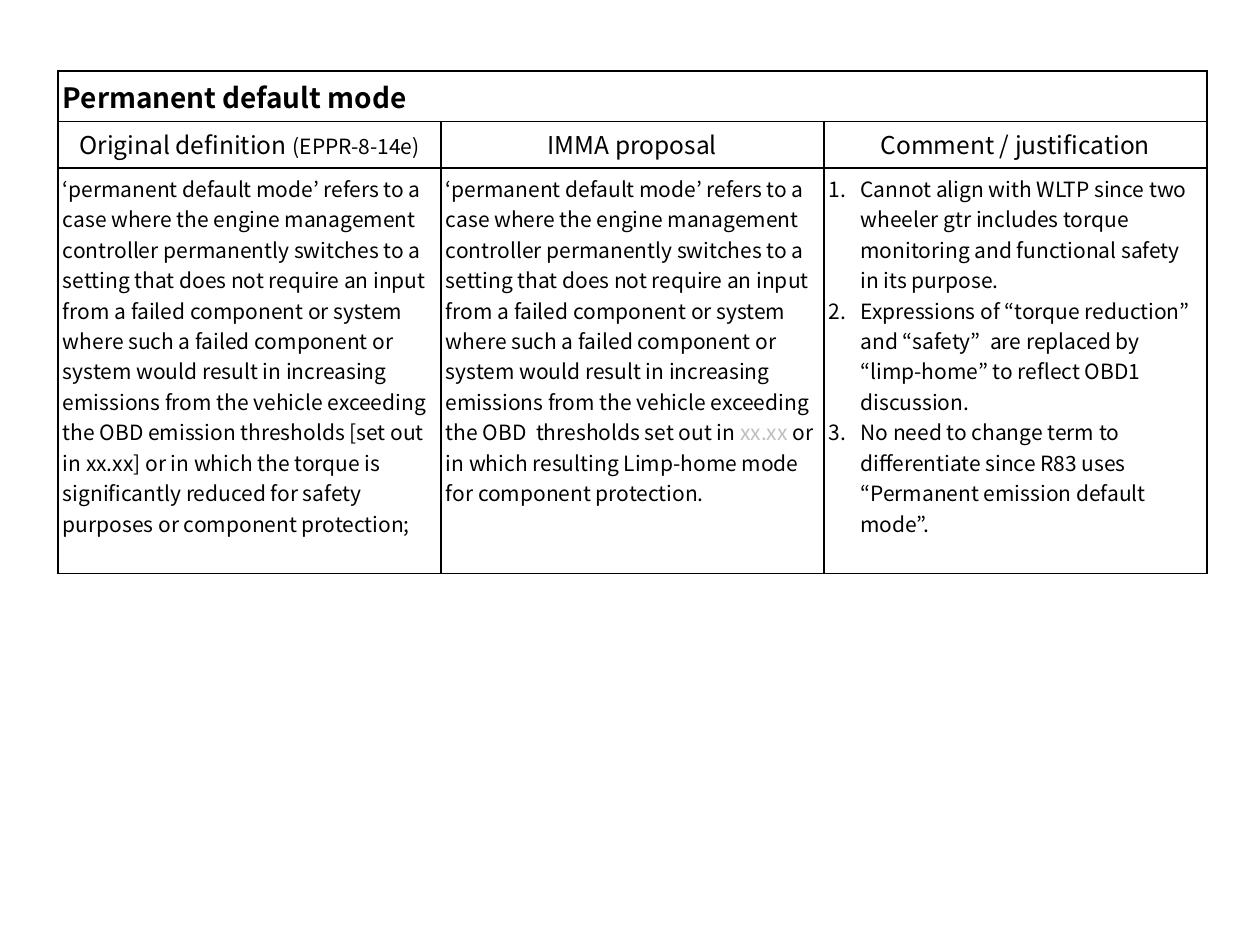
from dataclasses import dataclass

from lxml.etree import SubElement as Sub
from pptx import Presentation as Deck
from pptx.dml.color import RGBColor as Color
from pptx.enum.text import MSO_ANCHOR as Anchor, PP_ALIGN as Align
from pptx.oxml import parse_xml
from pptx.oxml.ns import nsdecls, qn
from pptx.table import _Cell as Cell
from pptx.util import Inches, Pt


@dataclass(frozen=True)
class Theme:
    font: str = "Noto Sans CJK JP"
    ink: str = "000000"
    faint: str = "BFBFBF"
    title: int = 16
    head: int = 14
    body: int = 12
    rule: float = 1
    inset: float = 0.04
    indent: float = 0.25


@dataclass(frozen=True)
class Run:
    text: str
    size: int
    color: str
    bold: bool = False


@dataclass(frozen=True)
class Entry:
    row: int
    col: int
    paras: list[list[Run]]
    align: Align = Align.LEFT
    listed: bool = False


THEME = Theme()
WIDE, HIGH = Inches(10), Inches(7.5)
LEFT, TOP, SPAN = 0.046, 0.075, 0.912
COLS = 3
ROWS = (0.4, 0.37, 3.22)


def body(text: str, color: str = THEME.ink) -> Run:
    return Run(text, THEME.body, color)


def head(text: str) -> Run:
    return Run(text, THEME.head, THEME.ink)


SHARED = (
    "‘permanent default mode’ refers to a case where the engine management "
    "controller permanently switches to a setting that does not require an input "
    "from a failed component or system where such a failed component or system "
    "would result in increasing emissions from the vehicle exceeding the OBD "
)
NOTES = (
    "Cannot align with WLTP since two wheeler gtr includes torque monitoring "
    "and functional safety in its purpose.",
    "Expressions of “torque reduction” and “safety”  are replaced by "
    "“limp-home” to reflect OBD1 discussion.",
    "No need to change term to differentiate since R83 uses "
    "“Permanent emission default mode”.",
)
ENTRIES = (
    Entry(0, 0, [[Run("Permanent default mode", THEME.title, THEME.ink, True)]]),
    Entry(1, 0, [[head("Original definition "), body("(EPPR-8-14e)")]], Align.CENTER),
    Entry(1, 1, [[head("IMMA proposal")]], Align.CENTER),
    Entry(1, 2, [[head("Comment / justification")]], Align.CENTER),
    Entry(2, 0, [[body(
        SHARED + "emission thresholds [set out in xx.xx] or in which the torque is "
        "significantly reduced for safety purposes or component protection;"
    )]]),
    Entry(2, 1, [[
        body(SHARED + " thresholds set out in "),
        body("xx.xx ", THEME.faint),
        body("or in which resulting Limp-home mode for component protection."),
    ]]),
    Entry(2, 2, [[body(note)] for note in NOTES], listed=True),
)


def frame(cell: Cell) -> None:
    cell.fill.background()
    cell.vertical_anchor = Anchor.TOP
    cell.margin_left = cell.margin_right = Inches(THEME.inset)
    cell.margin_top = cell.margin_bottom = Inches(THEME.inset)
    props = cell._tc.get_or_add_tcPr()
    for spot, side in enumerate("LRTB"):
        props.insert(spot, parse_xml(
            f'<a:ln{side} {nsdecls("a")} w="{Pt(THEME.rule)}"><a:solidFill>'
            f'<a:srgbClr val="{THEME.ink}"/></a:solidFill></a:ln{side}>'
        ))


def write(cell: Cell, entry: Entry) -> None:
    text = cell.text_frame
    for spot, runs in enumerate(entry.paras):
        para = text.add_paragraph() if spot else text.paragraphs[0]
        para.alignment = entry.align
        if entry.listed:
            props = para._p.get_or_add_pPr()
            props.set("marL", str(Inches(THEME.indent)))
            props.set("indent", str(-Inches(THEME.indent)))
            Sub(props, qn("a:buAutoNum"), type="arabicPeriod")
        for item in runs:
            run = para.add_run()
            run.text = item.text
            font = run.font
            font.name, font.size, font.bold = THEME.font, Pt(item.size), item.bold
            font.color.rgb = Color.from_string(item.color)
            Sub(run._r.get_or_add_rPr(), qn("a:ea"), typeface=THEME.font)


def main() -> None:
    deck = Deck()
    deck.slide_width, deck.slide_height = WIDE, HIGH
    slide = deck.slides.add_slide(deck.slide_layouts[6])
    table = slide.shapes.add_table(
        len(ROWS), COLS, int(WIDE * LEFT), int(HIGH * TOP),
        int(WIDE * SPAN), Inches(sum(ROWS)),
    ).table
    table.first_row = table.horz_banding = False
    for row, high in zip(table.rows, ROWS):
        row.height = Inches(high)
        for cell in row.cells:
            frame(cell)
    table.cell(0, 0).merge(table.cell(0, COLS - 1))
    for entry in ENTRIES:
        write(table.cell(entry.row, entry.col), entry)
    deck.save("out.pptx")


if __name__ == "__main__":
    main()
